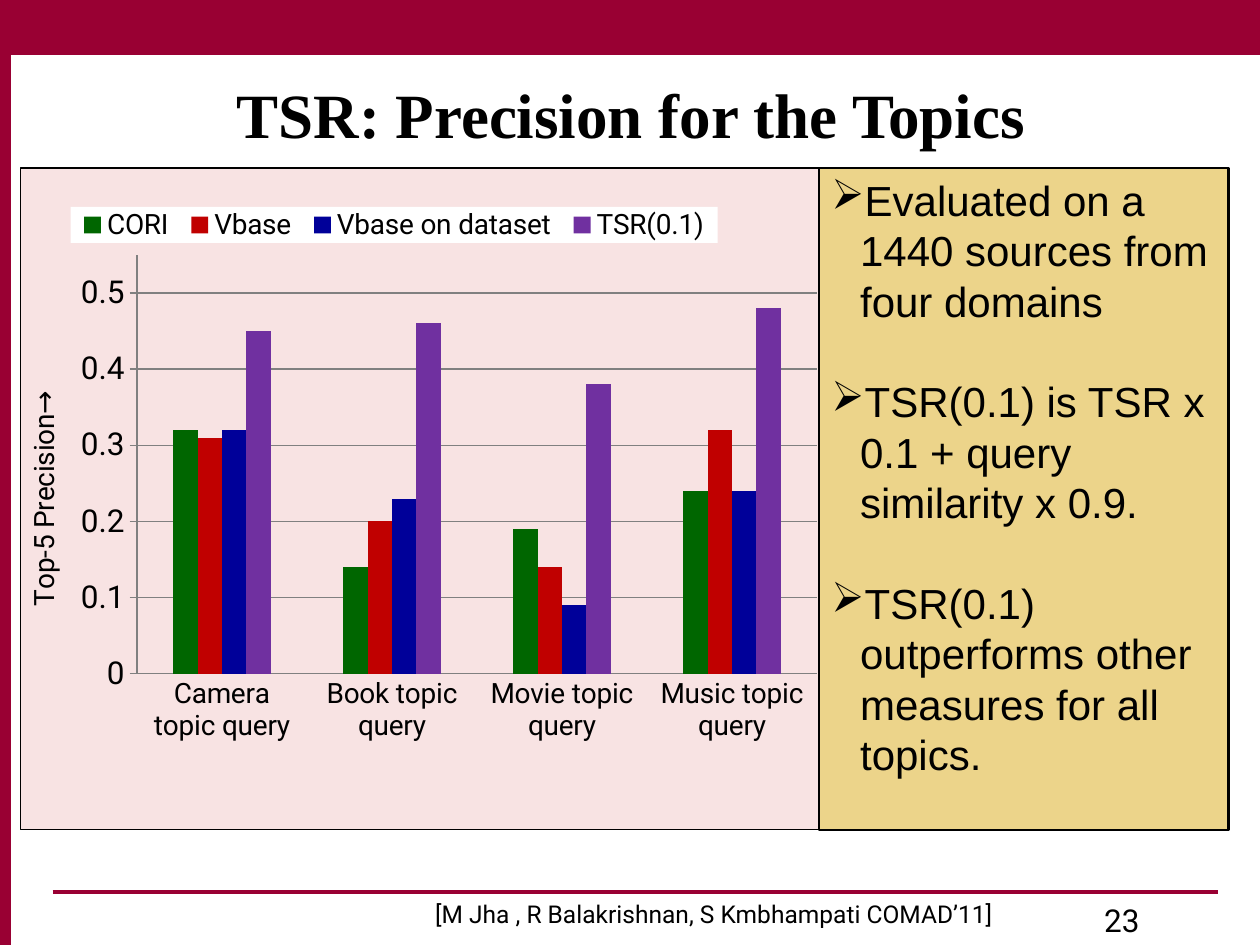
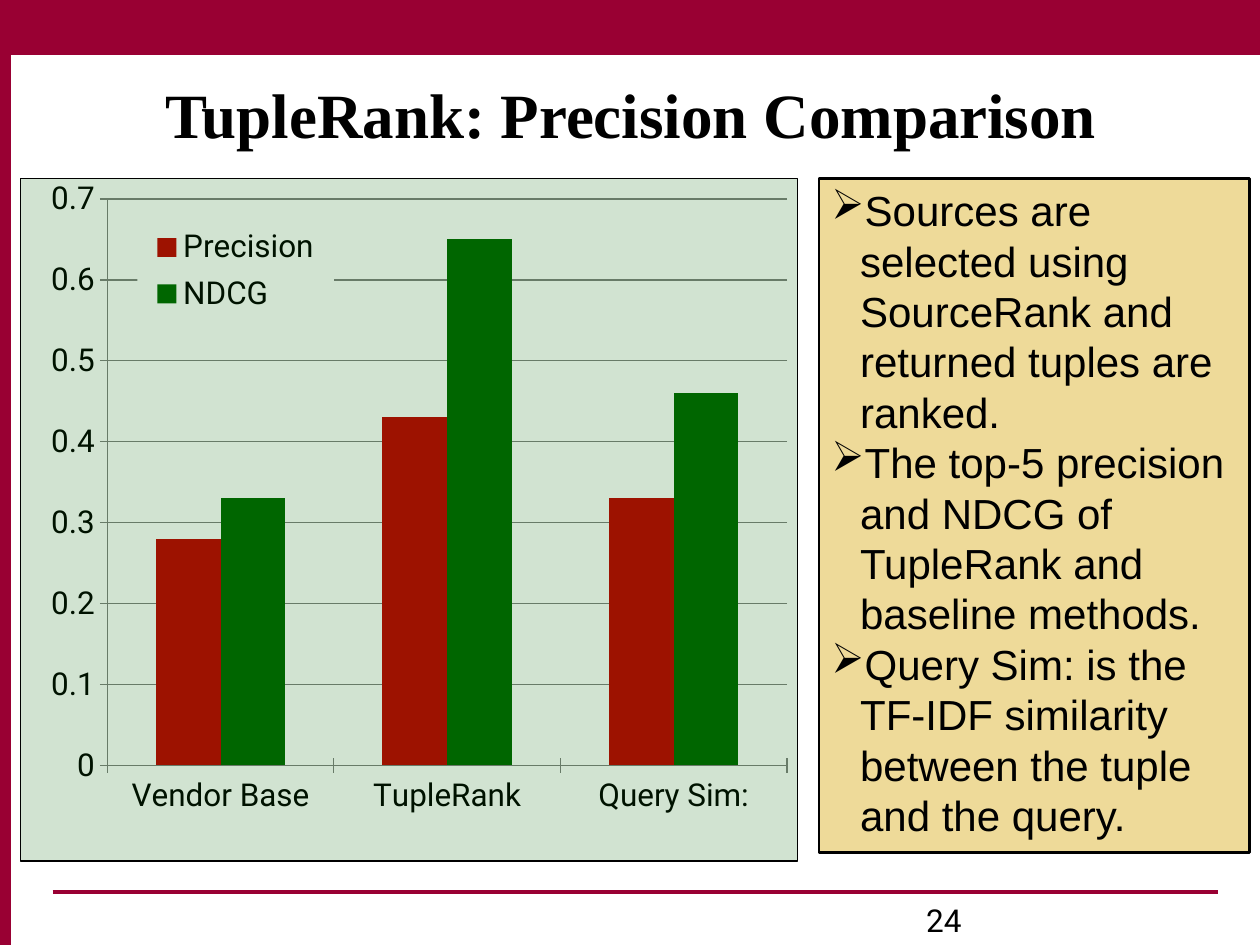
"""Build two slides that compare ranking precision in column charts."""
import lxml.etree
import pptx
import pptx.chart.data
import pptx.dml.color
import pptx.enum.chart
import pptx.enum.shapes
import pptx.enum.text
import pptx.oxml
import pptx.oxml.ns
import pptx.util

Cm = pptx.util.Cm
Pt = pptx.util.Pt
RGB = pptx.dml.color.RGBColor
qn = pptx.oxml.ns.qn
ALIGN = pptx.enum.text.PP_ALIGN
ANCHOR = pptx.enum.text.MSO_ANCHOR
TICK = pptx.enum.chart.XL_TICK_MARK

MAROON = RGB(0x99, 0x00, 0x33)
BLACK = RGB(0x00, 0x00, 0x00)
GRAY = RGB(0x80, 0x80, 0x80)
GREEN = RGB(0x00, 0x66, 0x00)
RED = RGB(0xC0, 0x00, 0x00)
BLUE = RGB(0x00, 0x00, 0x99)
PURPLE = RGB(0x70, 0x30, 0xA0)
GOLD = RGB(0xD6, 0xA3, 0x00)

HEAD_FONT = "Times New Roman"
BODY_FONT = "Arial"
CHART_FONT = "Roboto"


def write_text(p, text, size=18, font=CHART_FONT, bold=False, align=ALIGN.LEFT):
    p.alignment = align
    r = p.add_run()
    r.text = text
    r.font.size = Pt(size)
    r.font.name = font
    r.font.bold = bold
    r.font.color.rgb = BLACK


def chart_xml(body):
    return pptx.oxml.parse_xml(
        f'<c:root {pptx.oxml.ns.nsdecls("c", "a")}>{body}</c:root>')[0]


def layout_xml(x, y, w, h, target=""):
    modes = "".join(f'<c:{m}Mode val="edge"/>' for m in "xy")
    sizes = "".join(f'<c:{k} val="{v}"/>' for k, v in zip("xywh", (x, y, w, h)))
    return chart_xml(f"<c:layout><c:manualLayout>{target}{modes}{sizes}"
                     "</c:manualLayout></c:layout>")


class Deck:
    def __init__(self):
        self.prs = pptx.Presentation()
        self.prs.slide_width = Cm(25.4)
        self.prs.slide_height = Cm(19.05)
        self.s = None

    def slide(self, title, number, number_left):
        self.s = self.prs.slides.add_slide(self.prs.slide_layouts[5])
        self.line(1.06, 17.99, 24.56)
        self.rect((0, 0, 0.21, 19.05), MAROON, MAROON)
        self.line(0, 1.06, 25.4)
        for left in (0.21, 5.5):
            self.rect((left, 0, 19.9, 1.06), MAROON, MAROON)
        sp = self.s.shapes.title
        sp.left, sp.top, sp.width, sp.height = map(Cm, (1.9, 1.27, 21.64, 1.9))
        tf = sp.text_frame
        tf.vertical_anchor = ANCHOR.BOTTOM
        tf.auto_size = pptx.enum.text.MSO_AUTO_SIZE.NONE
        write_text(tf.paragraphs[0], title, 36, HEAD_FONT, True, ALIGN.CENTER)
        self.text((number_left, 18.03, 5.93, 1.02), number)

    def line(self, x1, y, x2):
        sp = self.s.shapes.add_connector(
            pptx.enum.shapes.MSO_CONNECTOR.STRAIGHT, Cm(x1), Cm(y), Cm(x2), Cm(y))
        sp.line.color.rgb = MAROON
        sp.line.width = Pt(2.25)
        lxml.etree.SubElement(sp._element.spPr, qn("a:effectLst"))

    def rect(self, box, fill, line=BLACK, width=0.75, alpha=100):
        sp = self.s.shapes.add_shape(
            pptx.enum.shapes.MSO_SHAPE.RECTANGLE, *map(Cm, box))
        sp.shadow.inherit = False
        sp.fill.solid()
        sp.fill.fore_color.rgb = fill
        sp.line.color.rgb = line
        sp.line.width = Pt(width)
        if alpha < 100:
            color = sp._element.spPr.find(qn("a:solidFill"))[0]
            lxml.etree.SubElement(color, qn("a:alpha"), val=str(alpha * 1000))
        return sp

    def text(self, box, text, **style):
        tf = self.s.shapes.add_textbox(*map(Cm, box)).text_frame
        tf.word_wrap = True
        write_text(tf.paragraphs[0], text, **style)

    def bullets(self, box, items, alpha, gap=0):
        tf = self.rect(box, GOLD, width=1.5, alpha=alpha).text_frame
        tf.word_wrap = True
        tf.vertical_anchor = ANCHOR.TOP
        for i, item in enumerate(items):
            p = tf.add_paragraph() if i else tf.paragraphs[0]
            write_text(p, item, 24, BODY_FONT)
            p.line_spacing = Pt(28.8)
            p.space_before = Pt(gap if i else 0)
            pPr = p._p.get_or_add_pPr()
            pPr.set("marL", str(Cm(0.58)))
            pPr.set("indent", str(-Cm(0.58)))
            lxml.etree.SubElement(pPr, qn("a:buChar"), char="➢")

    def chart(self, box, cats, series, top, plot, legend, size, cat_tick,
              gap=150, axis_title=None):
        data = pptx.chart.data.CategoryChartData()
        data.categories = cats
        for name, values, _ in series:
            data.add_series(name, values)
        chart = self.s.shapes.add_chart(
            pptx.enum.chart.XL_CHART_TYPE.COLUMN_CLUSTERED,
            *map(Cm, box), data).chart
        chart.has_title = False
        chart.font.name = CHART_FONT
        chart.font.size = Pt(10)
        chart.font.color.rgb = BLACK

        bars = chart.plots[0]
        bars.gap_width = gap
        bars.overlap = 0
        bars.vary_by_categories = False
        for ser, (_, _, color) in zip(bars.series, series):
            ser.format.fill.solid()
            ser.format.fill.fore_color.rgb = color

        cat, val = chart.category_axis, chart.value_axis
        for axis, tick, pts in ((cat, cat_tick, size), (val, TICK.CROSS, 18)):
            axis.major_tick_mark = tick
            axis.minor_tick_mark = TICK.NONE
            axis.tick_labels.font.size = Pt(pts)
            axis.format.line.color.rgb = GRAY
        val.minimum_scale, val.maximum_scale, val.major_unit = 0, top, 0.1
        val.has_major_gridlines = True
        val.major_gridlines.format.line.color.rgb = GRAY
        if axis_title:
            write_text(val.axis_title.text_frame.paragraphs[0], axis_title, 16,
                       align=ALIGN.CENTER)

        chart.has_legend = True
        chart.legend.position = pptx.enum.chart.XL_LEGEND_POSITION.RIGHT
        chart.legend.include_in_layout = False
        chart.legend.font.size = Pt(size)
        self.place_parts(chart, plot, legend)

    def place_parts(self, chart, plot, legend):
        empty = "<c:spPr><a:noFill/><a:ln><a:noFill/></a:ln></c:spPr>"
        root = chart._chartSpace
        root.find(qn("c:chart")).addnext(chart_xml(empty))
        area = root.chart.plotArea
        for old in area.findall(qn("c:layout")):
            area.remove(old)
        area.insert(0, layout_xml(*plot, '<c:layoutTarget val="inner"/>'))
        area.append(chart_xml(empty))
        overlay = chart.legend._element.find(qn("c:overlay"))
        overlay.addprevious(layout_xml(*legend))
        overlay.addnext(chart_xml(
            '<c:spPr><a:solidFill><a:srgbClr val="FFFFFF"/></a:solidFill></c:spPr>'))


def topics_slide(deck):
    deck.slide("TSR: Precision for the Topics", "23", 22.01)
    deck.rect((0.42, 3.39, 16.09, 13.34), RED, alpha=11)
    deck.chart(
        (0.42, 3.81, 16.72, 12.07),
        [f"{topic} topic query" for topic in ("Camera", "Book", "Movie", "Music")],
        [("CORI", (0.32, 0.14, 0.19, 0.24), GREEN),
         ("Vbase", (0.31, 0.2, 0.14, 0.32), RED),
         ("Vbase on dataset", (0.32, 0.23, 0.09, 0.24), BLUE),
         ("TSR(0.1)", (0.45, 0.46, 0.38, 0.48), PURPLE)],
        top=0.55, plot=(0.14, 0.11, 0.82, 0.7), legend=(0.06, 0.03, 0.78, 0.06),
        size=16, cat_tick=TICK.NONE, gap=300, axis_title="Top-5 Precision→")
    deck.bullets(
        (16.51, 3.39, 8.26, 13.34),
        ["Evaluated on a 1440 sources from four domains",
         "TSR(0.1) is TSR x 0.1 + query similarity x 0.9.",
         "TSR(0.1) outperforms other measures for all topics."],
        alpha=46, gap=28.8)
    deck.text((7.62, 17.99, 13.55, 0.85),
              "[M Jha , R Balakrishnan, S Kmbhampati COMAD’11]",
              size=14, align=ALIGN.CENTER)


def tuple_rank_slide(deck):
    deck.slide("TupleRank: Precision Comparison", "24", 18.42)
    deck.chart(
        (0.64, 3.6, 15.24, 13.76),
        ["Vendor Base", "TupleRank", "Query Sim:"],
        [("Precision", (0.28, 0.43, 0.33), RED),
         ("NDCG", (0.33, 0.65, 0.46), GREEN)],
        top=0.7, plot=(0.1, 0.03, 0.9, 0.83), legend=(0.14, 0.06, 0.26, 0.15),
        size=18, cat_tick=TICK.CROSS)
    deck.rect((0.42, 3.6, 15.66, 13.76), GREEN, alpha=18)
    deck.bullets(
        (16.51, 3.6, 8.68, 13.59),
        ["Sources are selected using SourceRank and returned tuples are ranked.",
         "The top-5 precision and NDCG of TupleRank and baseline methods.",
         "Query Sim: is the TF-IDF similarity between the tuple and the query."],
        alpha=40)


def main():
    deck = Deck()
    topics_slide(deck)
    tuple_rank_slide(deck)
    deck.prs.save("out.pptx")


if __name__ == "__main__":
    main()
